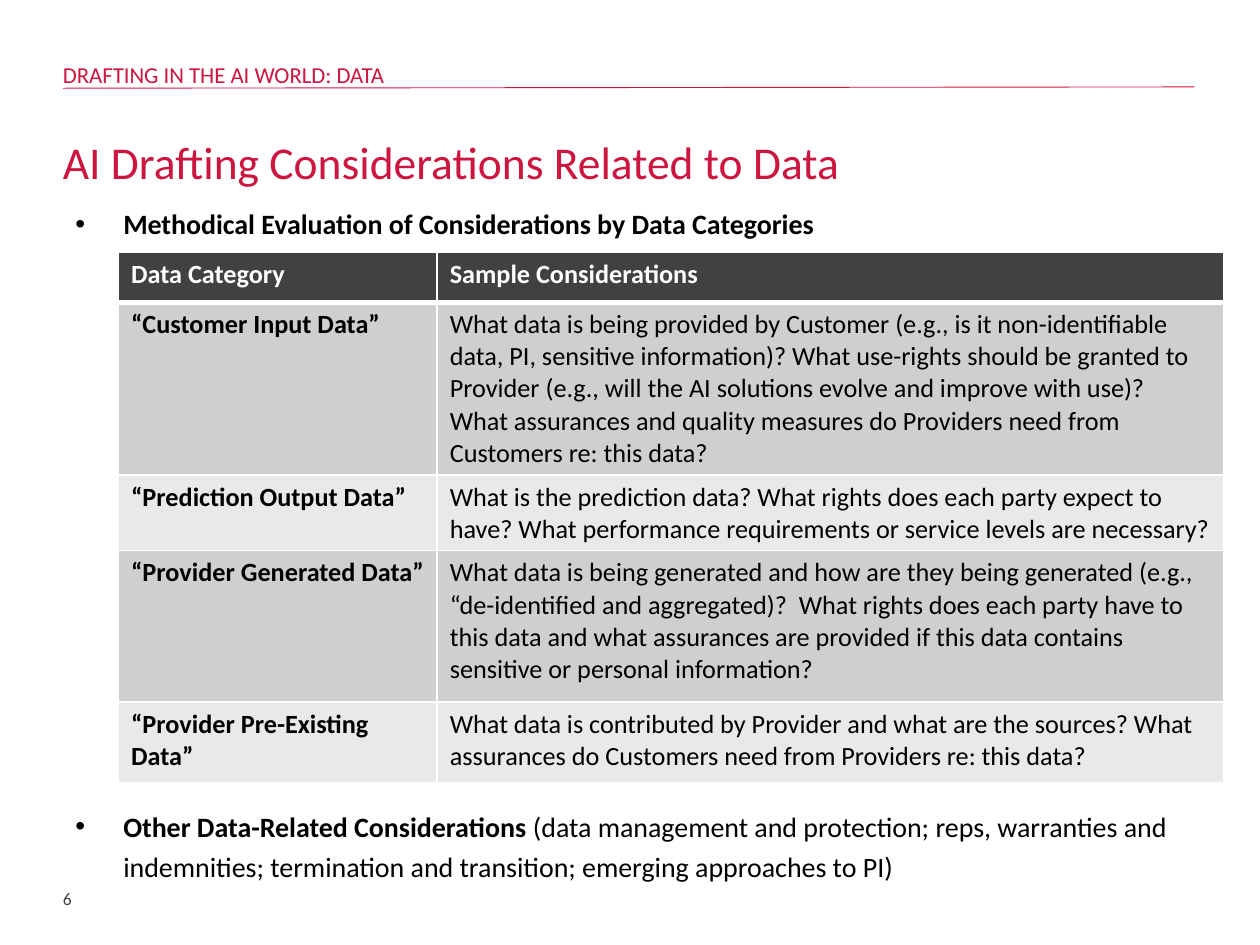
from lxml import etree
from pptx import Presentation
from pptx.dml.color import RGBColor
from pptx.enum.shapes import MSO_CONNECTOR
from pptx.enum.text import MSO_ANCHOR
from pptx.oxml.ns import qn
from pptx.util import Inches, Pt

LINE = MSO_CONNECTOR.STRAIGHT
TOP, MID, LOW = MSO_ANCHOR.TOP, MSO_ANCHOR.MIDDLE, MSO_ANCHOR.BOTTOM
COLS, ROWS = 100, 75  # grid of the slide, one cell is a tenth of an inch
HEX = {"red": "CD163F", "dark": "414141", "black": "000000",
       "white": "FFFFFF", "mid": "CFCFCF", "pale": "E9E9E9"}
LEFT = 5

HEAD = ("Data Category", "Sample Considerations")
BODY = [
    ("“Customer Input Data”",
     "What data is being provided by Customer (e.g., is it non-identifiable "
     "data, PI, sensitive information)? What use-rights should be granted to "
     "Provider (e.g., will the AI solutions evolve and improve with use)?  "
     "What assurances and quality measures do Providers need from Customers "
     "re: this data?"),
    ("“Prediction Output Data”",
     "What is the prediction data? What rights does each party expect to "
     "have? What performance requirements or service levels are necessary?"),
    ("“Provider Generated Data”",
     "What data is being generated and how are they being generated (e.g., "
     "“de-identified and aggregated)?  What rights does each party have to "
     "this data and what assurances are provided if this data contains "
     "sensitive or personal information?"),
    ("“Provider Pre-Existing Data”",
     "What data is contributed by Provider and what are the sources? What "
     "assurances do Customers need from Providers re: this data?"),
]
WIDTHS = (25.3, 62.4)
HEIGHTS = (4, 13.7, 6, 12, 6.4)


def grid(*cells):
    return [Inches(cell / 10) for cell in cells]


def color(name):
    return RGBColor.from_string(HEX[name])


def add_run(par, text, tint, **form):
    """Add a run; form holds font values such as size and bold."""
    run = par.add_run()
    run.text = text
    run.font.color.rgb = color(tint)
    for key, value in {"name": "Calibri", **form}.items():
        setattr(run.font, key, value)


def add_box(slide, place, anchor=TOP, inset=0):
    """Add a text box and return its first paragraph."""
    frame = slide.shapes.add_textbox(*grid(*place)).text_frame
    form = {"word_wrap": True, "vertical_anchor": anchor,
            "margin_left": inset, "margin_right": inset,
            "margin_top": inset // 2, "margin_bottom": inset // 2}
    for key, value in form.items():
        setattr(frame, key, value)
    return frame.paragraphs[0]


def add_point(slide, place, bold, plain=""):
    """Add a bullet point with a bold lead and a plain rest."""
    par = add_box(slide, place, inset=Inches(0.1))
    props = par._p.get_or_add_pPr()
    props.set("marL", str(Inches(0.38)))
    props.set("indent", str(-Inches(0.38)))
    etree.SubElement(props, qn("a:buFont"), typeface="Arial")
    etree.SubElement(props, qn("a:buChar"), char="•")
    par.line_spacing = 1.2
    for text, heavy in ((bold, True), (plain, False)):
        if text:
            add_run(par, text, "black", size=Pt(16), bold=heavy)


def add_rule(slide, ends):
    line = slide.shapes.add_connector(LINE, *grid(*ends))
    line.line.color.rgb = color("red")
    line.line.width = Pt(0.5)
    etree.SubElement(line._element.spPr, qn("a:effectLst"))


def add_edge(cell, side, width):
    """Draw one white border; call before the cell is filled."""
    props = cell._tc.get_or_add_tcPr()
    edge = etree.SubElement(props, qn("a:ln" + side), w=str(Pt(width)))
    fill = etree.SubElement(edge, qn("a:solidFill"))
    etree.SubElement(fill, qn("a:srgbClr"), val=HEX["white"])


def add_grid(slide, place):
    """Add the table of data categories."""
    rows = [HEAD, *BODY]
    size = sum(WIDTHS), sum(HEIGHTS)
    table = slide.shapes.add_table(
        len(rows), len(HEAD), *grid(*place, *size)).table
    for col, width in zip(table.columns, grid(*WIDTHS)):
        col.width = width
    for row, height in zip(table.rows, grid(*HEIGHTS)):
        row.height = height
    for r, texts in enumerate(rows):
        fill = "dark" if r == 0 else ("pale", "mid")[r % 2]
        for c, text in enumerate(texts):
            cell = table.cell(r, c)
            thick = {"T": 3 if r == 1 else 1, "B": 3 if r == 0 else 1}
            for side in "LRTB":
                add_edge(cell, side, thick.get(side, 1))
            cell.fill.solid()
            cell.fill.fore_color.rgb = color(fill)
            add_run(cell.text_frame.paragraphs[0], text,
                    "black" if r else "white",
                    size=Pt(15), bold=r == 0 or c == 0)


def main():
    deck = Presentation()
    deck.slide_width, deck.slide_height = grid(COLS, ROWS)
    slide = deck.slides.add_slide(deck.slide_layouts[6])

    # Running head, rule and page number
    add_rule(slide, (LEFT, 7, 94.8, 6.9))
    add_run(add_box(slide, (LEFT, 69.3, 23.3, 4), MID), "6", "dark",
            size=Pt(10))
    add_run(add_box(slide, (LEFT, 4.6, 90, 2.4), LOW),
            "DRAFTING IN THE AI WORLD: DATA", "red", size=Pt(13))

    # Title
    title = add_box(slide, (LEFT, 9.4, 90, 5.9), MID)
    title.line_spacing = 1.2
    add_run(title, "AI Drafting Considerations Related to Data", "red",
            size=Pt(26))

    # Points above and below the table
    add_point(slide, (LEFT, 15.4, 92.1, 4.3),
              "Methodical Evaluation of Considerations by Data Categories")
    add_grid(slide, (9.4, 20))
    add_point(slide, (LEFT, 63.2, 92.1, 7.5),
              "Other Data-Related Considerations ",
              "(data management and protection; reps, warranties and "
              "indemnities; termination and transition; emerging approaches "
              "to PI)")
    deck.save("out.pptx")


if __name__ == "__main__":
    main()
